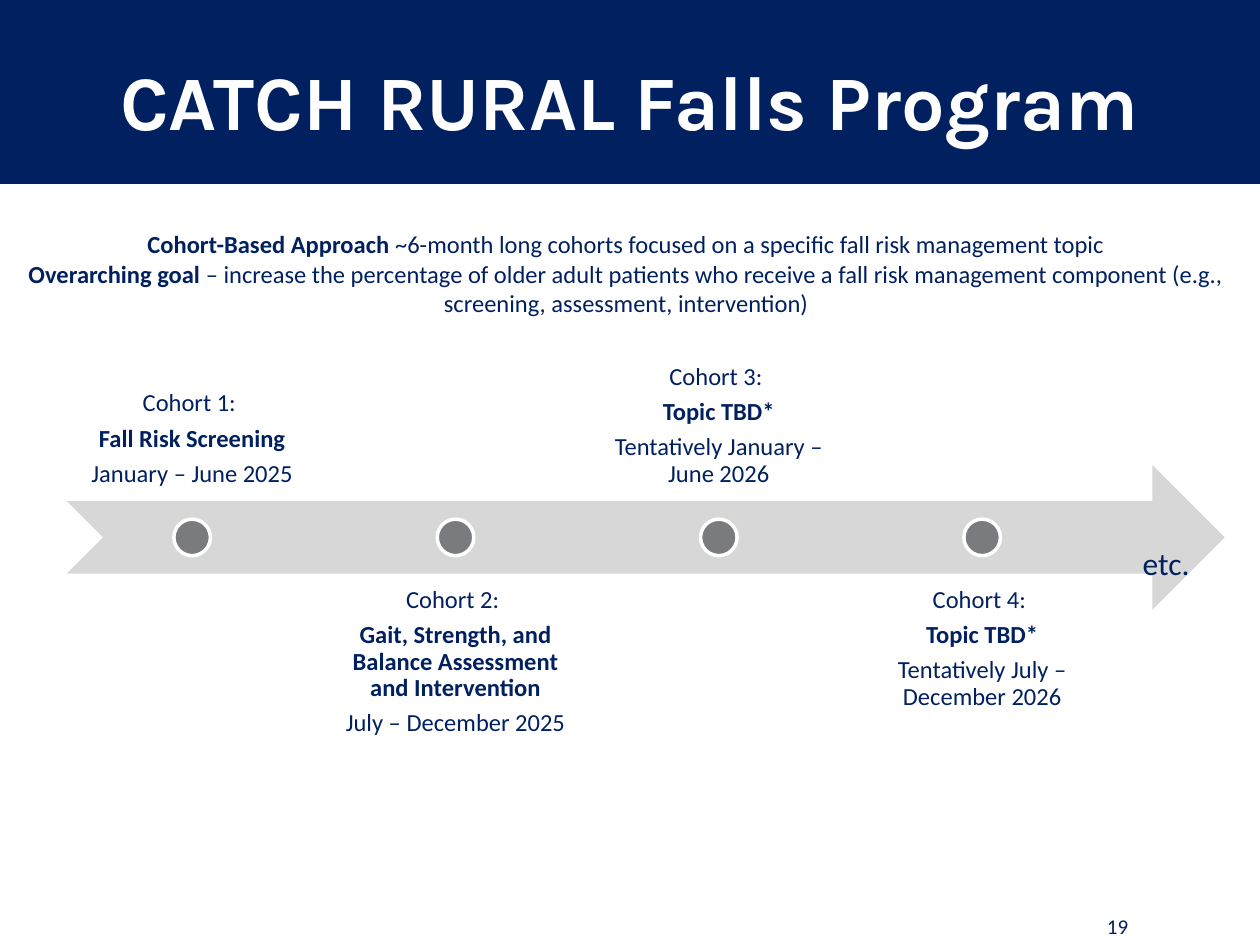
from pptx import Presentation
from pptx.dml.color import RGBColor
from pptx.enum.shapes import MSO_SHAPE as Shape
from pptx.enum.text import MSO_ANCHOR as Anchor, PP_ALIGN as Align
from pptx.util import Inches, Pt

NAVY, WHITE, LIGHT_GREY, DARK_GREY = "002060", "FFFFFF", "D7D7D8", "797B7E"
WIDTH, HEIGHT = 10, 7.5

# Timeline grid: one column per cohort
LEFT, COLUMN_STEP, COLUMN_WIDTH = 0.53, 2.09, 1.99
ARROW_TOP, ARROW_WIDTH, ARROW_HEIGHT = 3.69, 9.19, 1.15
LABEL_TOPS = (2.83, 4.55)
DOT = 0.29

INTRO = [
    [("Cohort-Based Approach ", True),
     ("~6-month long cohorts focused on a specific fall risk management topic", False)],
    [("Overarching goal ", True),
     ("– increase the percentage of older adult patients who receive a fall risk "
      "management component (e.g., screening, assessment, intervention)", False)],
]
COHORTS = [
    ("Fall Risk Screening", "January – June 2025"),
    ("Gait, Strength, and Balance Assessment and Intervention", "July – December 2025"),
    ("Topic TBD*", "Tentatively January – June 2026"),
    ("Topic TBD*", "Tentatively July – December 2026"),
]


def color(value):
    return RGBColor.from_string(value)


def set_attributes(target, values):
    for name, value in values.items():
        setattr(target, name, value)


def place(shape, left, top, width, height):
    box = dict(left=left, top=top, width=width, height=height)
    set_attributes(shape, {name: Inches(value) for name, value in box.items()})


def write(frame, paragraphs, size, name="Calibri", text_color=NAVY, **paragraph_format):
    """Fill a text frame; each paragraph is a list of (text, bold) runs."""
    for index, runs in enumerate(paragraphs):
        paragraph = frame.add_paragraph() if index else frame.paragraphs[0]
        set_attributes(paragraph, paragraph_format)
        for text, bold in runs:
            run = paragraph.add_run()
            run.text = text
            set_attributes(run.font, dict(size=Pt(size), name=name, bold=bold))
            run.font.color.rgb = color(text_color)


def add_text(slide, box, paragraphs, size, anchor=Anchor.TOP, margin=None, **paragraph_format):
    frame = slide.shapes.add_textbox(*map(Inches, box)).text_frame
    set_attributes(frame, dict(word_wrap=True, vertical_anchor=anchor))
    if margin is not None:
        sides = ("left", "top", "right", "bottom")
        set_attributes(frame, {f"margin_{side}": Inches(margin) for side in sides})
    write(frame, paragraphs, size, **paragraph_format)


def add_figure(slide, kind, box, fill, line=None):
    shape = slide.shapes.add_shape(kind, *map(Inches, box))
    shape.shadow.inherit = False
    shape.fill.solid()
    shape.fill.fore_color.rgb = color(fill)
    if line:
        shape.line.color.rgb = color(line)
        shape.line.width = Pt(2)
    else:
        shape.line.fill.background()
    return shape


def add_header(slide):
    title = slide.shapes.title
    band = add_figure(slide, Shape.RECTANGLE, (0, 0, WIDTH, 1.46), NAVY)
    title.element.addprevious(band.element)  # band goes behind the title
    place(title, 0.5, 0.17, 9, 1.25)
    title.text_frame.vertical_anchor = Anchor.MIDDLE
    write(title.text_frame, [[("CATCH RURAL Falls Program", True)]], 44,
          name="Karla", text_color=WHITE, alignment=Align.CENTER)


def add_cohort(slide, index, topic, period):
    """Labels alternate above and below the arrow."""
    below = index % 2
    left = LEFT + index * COLUMN_STEP
    lines = [[(f"Cohort {index + 1}: ", False)], [(topic, True)], [(period, False)]]
    add_text(slide, (left, LABEL_TOPS[below], COLUMN_WIDTH, ARROW_HEIGHT), lines, 14,
             anchor=Anchor.TOP if below else Anchor.BOTTOM, margin=0.11,
             alignment=Align.CENTER, line_spacing=0.9, space_after=Pt(5))
    dot_left = left + (COLUMN_WIDTH - DOT) / 2
    dot_top = ARROW_TOP + (ARROW_HEIGHT - DOT) / 2
    add_figure(slide, Shape.OVAL, (dot_left, dot_top, DOT, DOT), DARK_GREY, WHITE)


def main():
    presentation = Presentation()
    set_attributes(presentation, dict(slide_width=Inches(WIDTH), slide_height=Inches(HEIGHT)))
    slide = presentation.slides.add_slide(presentation.slide_layouts[5])

    # Header, page number and introduction
    add_header(slide)
    add_text(slide, (8.58, 7.2, 0.58, 0.3), [[("19", False)]], 12,
             anchor=Anchor.MIDDLE, alignment=Align.CENTER)
    add_text(slide, (0, 1.77, 9.94, 0.81), INTRO, 14, alignment=Align.CENTER)

    # Timeline
    add_figure(slide, Shape.NOTCHED_RIGHT_ARROW,
               (LEFT, ARROW_TOP, ARROW_WIDTH, ARROW_HEIGHT), LIGHT_GREY)
    for index, (topic, period) in enumerate(COHORTS):
        add_cohort(slide, index, topic, period)
    add_text(slide, (8.97, 4.27, 0.65, 0.4), [[("etc.", False)]], 18)

    presentation.save("out.pptx")


if __name__ == "__main__":
    main()
